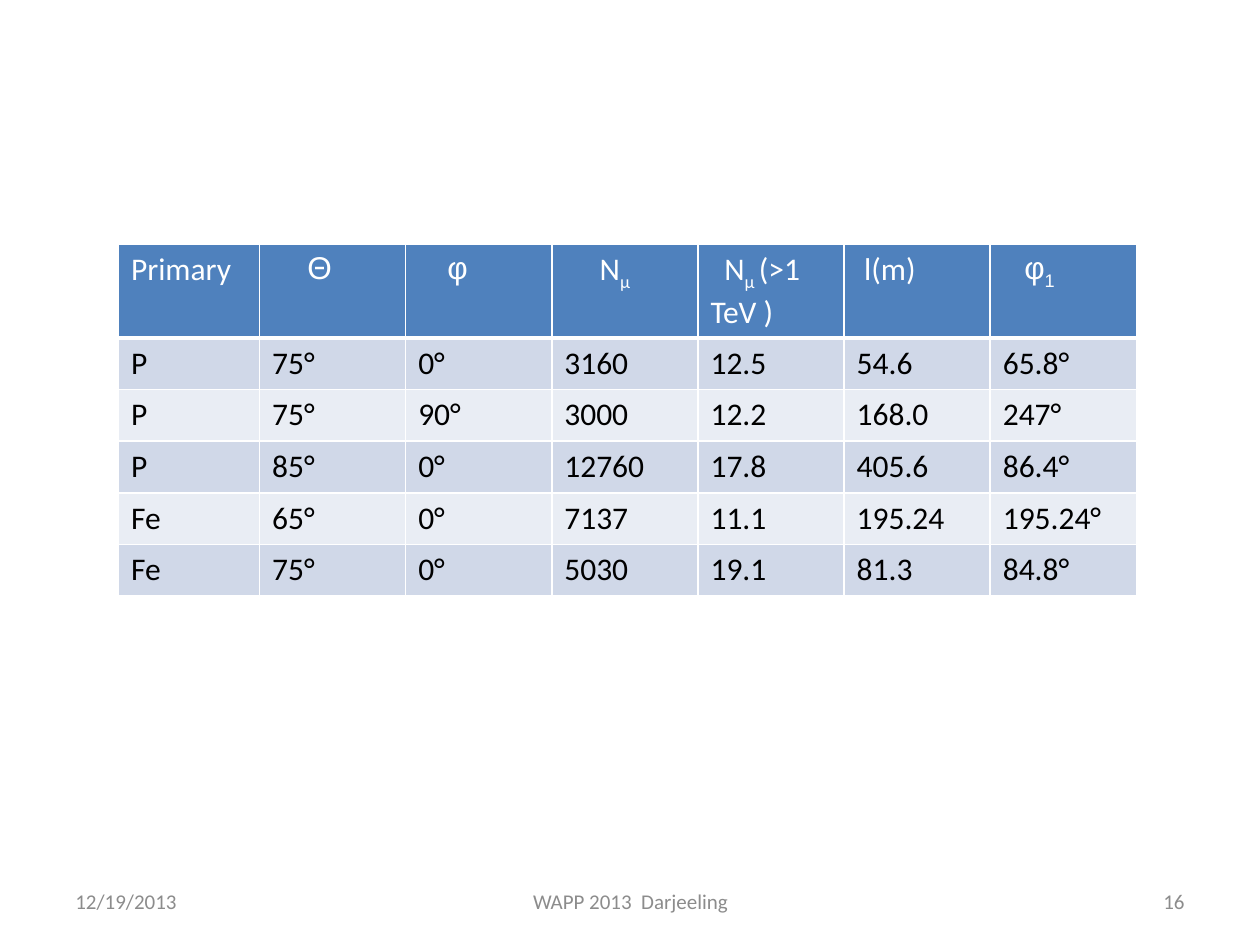
from lxml import etree
from pptx import Presentation
from pptx import util as u
from pptx.dml import color
from pptx.enum import text
from pptx.oxml import ns

GREY, WHITE, BLACK = "8C8C8C", "FFFFFF", "000000"
BLUE, BANDS = "4F81BD", ("D0D8E8", "E9EDF4")
ALIGN = text.PP_ALIGN

# Each heading: first-line indent, then runs of (text, font, is subscript)
HEADS = [
    (0, [("Primary", "Calibri", False)]),
    (0.28, [("Θ", "Arial", False)]),
    (0.23, [("φ", "Arial", False)]),
    (0.28, [("N", "Calibri", False), ("µ", "Calibri", True)]),
    (0.11, [("N", "Calibri", False), ("µ ", "Calibri", True),
            ("(>1 TeV )", "Calibri", False)]),
    (0.06, [("l(m)", "Calibri", False)]),
    (0.17, [("φ", "Arial", False), ("1", "Arial", True)]),
]
ROWS = [
    ["P", "75°", "0°", "3160", "12.5", "54.6", "65.8°"],
    ["P", "75°", "90°", "3000", "12.2", "168.0", "247°"],
    ["P", "85°", "0°", "12760", "17.8", "405.6", "86.4°"],
    ["Fe", "65°", "0°", "7137", "11.1", "195.24", "195.24°"],
    ["Fe", "75°", "0°", "5030", "19.1", "81.3", "84.8°"],
]


def rgb(code):
    return color.RGBColor.from_string(code)


def write(para, words, size=18, font="Calibri", ink=BLACK, sub=False):
    run = para.add_run()
    run.text = words
    run.font.size = u.Pt(size)
    run.font.name = font
    run.font.bold = False
    run.font.color.rgb = rgb(ink)
    if sub:
        run.font._element.set("baseline", "-25000")


def footer(slide, words, left, width, align):
    box = slide.shapes.add_textbox(u.Inches(left), u.Inches(6.95),
                                   u.Inches(width), u.Inches(0.4))
    frame = box.text_frame
    frame.word_wrap = True
    frame.vertical_anchor = text.MSO_ANCHOR.MIDDLE
    para = frame.paragraphs[0]
    para.alignment = align
    write(para, words, size=12, ink=GREY)


def paint(cell, fill):
    cell.fill.solid()
    cell.fill.fore_color.rgb = rgb(fill)


def border(cell, **sides):
    props = cell._tc.get_or_add_tcPr()
    for side, width in sides.items():
        line = etree.SubElement(props, ns.qn(f"a:ln{side}"), w=str(u.Pt(width)))
        fill = etree.SubElement(line, ns.qn("a:solidFill"))
        etree.SubElement(fill, ns.qn("a:srgbClr"), val=WHITE)


def grid(slide):
    frame = slide.shapes.add_table(len(ROWS) + 1, len(HEADS), u.Inches(0.94),
                                   u.Inches(1.94), u.Inches(8.09), u.Inches(2.73))
    table = frame.table
    for i, col in enumerate(table.columns):
        col.width = u.Inches(1.16 if i else 1.12)
    for i, row in enumerate(table.rows):
        row.height = u.Inches(0.41 if i else 0.7)

    # Heading row
    for i, (indent, runs) in enumerate(HEADS):
        cell = table.cell(0, i)
        border(cell, L=1, R=1, T=1, B=3)
        paint(cell, BLUE)
        para = cell.text_frame.paragraphs[0]
        if indent:
            para._p.get_or_add_pPr().set("indent", str(u.Inches(indent)))
        for words, font, sub in runs:
            write(para, words, font=font, ink=WHITE, sub=sub)

    # Banded data rows
    for r, row in enumerate(ROWS):
        for c, value in enumerate(row):
            cell = table.cell(r + 1, c)
            paint(cell, BANDS[r % 2])
            write(cell.text_frame.paragraphs[0], value)


def main():
    deck = Presentation()
    deck.slide_width, deck.slide_height = u.Inches(10), u.Inches(7.5)
    slide = deck.slides.add_slide(deck.slide_layouts[6])

    # Date, event and page number
    footer(slide, "12/19/2013", 0.5, 2.33, ALIGN.LEFT)
    footer(slide, "WAPP 2013  Darjeeling", 3.42, 3.17, ALIGN.CENTER)
    footer(slide, "16", 7.17, 2.33, ALIGN.RIGHT)

    # Muon results
    grid(slide)
    deck.save("out.pptx")


if __name__ == "__main__":
    main()
